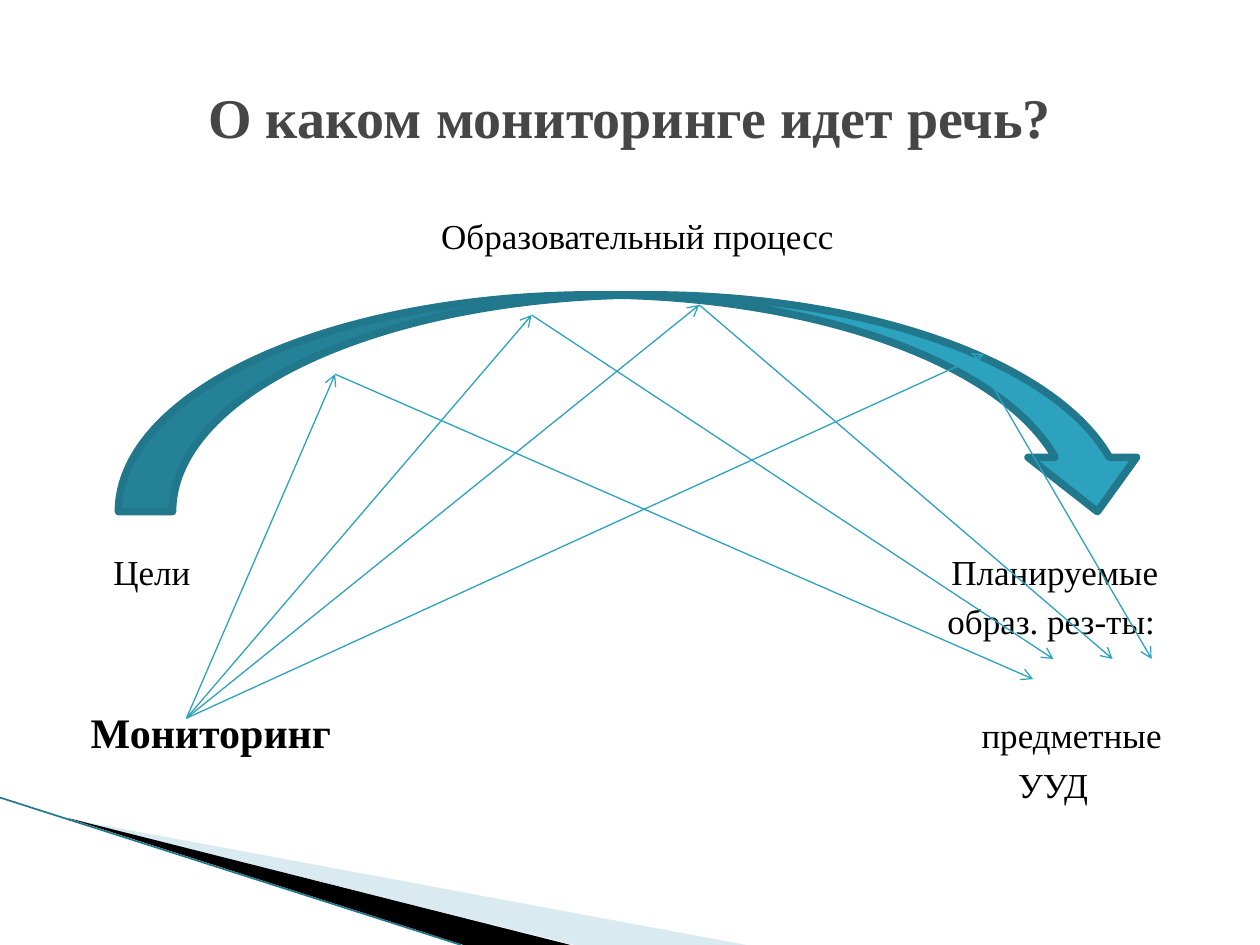
from typing import NamedTuple

from lxml import etree
from pptx import Presentation
from pptx.dml.color import RGBColor
from pptx.enum.shapes import MSO_CONNECTOR, MSO_SHAPE
from pptx.enum.text import MSO_ANCHOR, PP_ALIGN
from pptx.oxml.ns import qn
from pptx.util import Inches, Pt

STRAIGHT = MSO_CONNECTOR.STRAIGHT
CURVED_ARROW = MSO_SHAPE.CURVED_DOWN_ARROW
LEFT, CENTER = PP_ALIGN.LEFT, PP_ALIGN.CENTER
TOP, MIDDLE = MSO_ANCHOR.TOP, MSO_ANCHOR.MIDDLE

FONT = "Times New Roman"
TEAL, DARK_TEAL, PALE = "2DA2BF", "21788D", "A0CBDC"
BLACK, GREY = "000000", "464646"

Point = tuple[float, float]


class Label(NamedTuple):
    text: str
    x: float
    y: float
    w: float
    h: float = 0.35
    size: int = 20
    bold: bool = False
    color: str = BLACK
    align: PP_ALIGN = LEFT
    anchor: MSO_ANCHOR = TOP


class Route(NamedTuple):
    stage: Point   # point on the arc reached from monitoring
    start: Point   # where the second arrow leaves the arc
    result: Point


class Wedge(NamedTuple):
    points: list[Point]
    color: str
    alpha: int = 100


MONITORING = (1.48, 5.7)

LABELS = [
    Label("О каком мониторинге идет речь?", 0.5, 0.3, 9, 1.25, 32, True,
          GREY, CENTER, MIDDLE),
    Label("Образовательный процесс", 2.56, 1.7, 5, align=CENTER),
    Label("Цели", 0.9, 4.37, 1),
    Label("Планируемые", 7.55, 4.37, 2),
    Label("образ. рез-ты:", 7.52, 4.76, 2),
    Label("Мониторинг", 0.72, 5.61, 2.5, 0.4, 24, True),
    Label("предметные", 7.79, 5.66, 1.8),
    Label("УУД", 8.08, 6.06, 1),
]

ROUTES = [
    Route((2.66, 2.97), (2.66, 2.97), (8.2, 5.39)),
    Route((4.22, 2.5), (4.22, 2.5), (8.36, 5.23)),
    Route((5.55, 2.42), (5.55, 2.42), (8.83, 5.23)),
    Route((7.81, 2.81), (7.73, 2.81), (9.14, 5.23)),
]

WEDGES = [
    Wedge([(0.55, 6.5), (5.92, 7.5), (4.56, 7.5)], PALE, 40),
    Wedge([(0.53, 6.49), (4.53, 7.5), (3.68, 7.5)], BLACK),
]


def rgb(color: str) -> RGBColor:
    return RGBColor.from_string(color)


def add_wedge(s, wedge: Wedge) -> None:
    points = [(Inches(x), Inches(y)) for x, y in wedge.points]
    fb = s.shapes.build_freeform(*points[0])
    fb.add_line_segments(points[1:])
    sp = fb.convert_to_shape()
    sp.shadow.inherit = False
    sp.fill.solid()
    sp.fill.fore_color.rgb = rgb(wedge.color)
    sp.line.fill.background()
    if wedge.alpha < 100:
        clr = sp._element.spPr.find(".//" + qn("a:srgbClr"))
        etree.SubElement(clr, qn("a:alpha"), val=str(wedge.alpha * 1000))


def add_line(s, start: Point, end: Point, color: str = TEAL,
             width: float = 0.75, arrow: bool = True) -> None:
    cn = s.shapes.add_connector(STRAIGHT, *map(Inches, start + end))
    cn.line.color.rgb = rgb(color)
    cn.line.width = Pt(width)
    if arrow:
        etree.SubElement(cn.line._get_or_add_ln(), qn("a:tailEnd"), type="arrow")
    etree.SubElement(cn._element.spPr, qn("a:effectLst"))


def add_label(s, label: Label) -> None:
    box = s.shapes.add_textbox(Inches(label.x), Inches(label.y),
                               Inches(label.w), Inches(label.h))
    tf = box.text_frame
    tf.word_wrap = True
    tf.vertical_anchor = label.anchor
    tf.margin_left = tf.margin_right = tf.margin_top = tf.margin_bottom = 0
    p = tf.paragraphs[0]
    p.alignment = label.align
    r = p.add_run()
    r.text = label.text
    r.font.name = FONT
    r.font.size = Pt(label.size)
    r.font.bold = label.bold
    r.font.color.rgb = rgb(label.color)


def add_process_arrow(s) -> None:
    sp = s.shapes.add_shape(CURVED_ARROW, Inches(0.94), Inches(2.34),
                            Inches(8.2), Inches(1.72))
    sp.shadow.inherit = False
    sp.fill.solid()
    sp.fill.fore_color.rgb = rgb(TEAL)
    sp.line.color.rgb = rgb(DARK_TEAL)
    sp.line.width = Pt(4.33)
    etree.SubElement(sp.line._get_or_add_ln(), qn("a:round"))


def main() -> None:
    prs = Presentation()
    prs.slide_width, prs.slide_height = Inches(10), Inches(7.5)
    s = prs.slides.add_slide(prs.slide_layouts[6])

    # Corner decoration
    for wedge in WEDGES:
        add_wedge(s, wedge)
    add_line(s, (0, 6.33), (3.66, 7.5), DARK_TEAL, 0.95, arrow=False)

    # Title and captions
    for label in LABELS:
        add_label(s, label)

    # Educational process with monitoring routes to the results
    add_process_arrow(s)
    for route in ROUTES:
        add_line(s, MONITORING, route.stage)
        add_line(s, route.start, route.result)

    prs.save("out.pptx")


if __name__ == "__main__":
    main()
